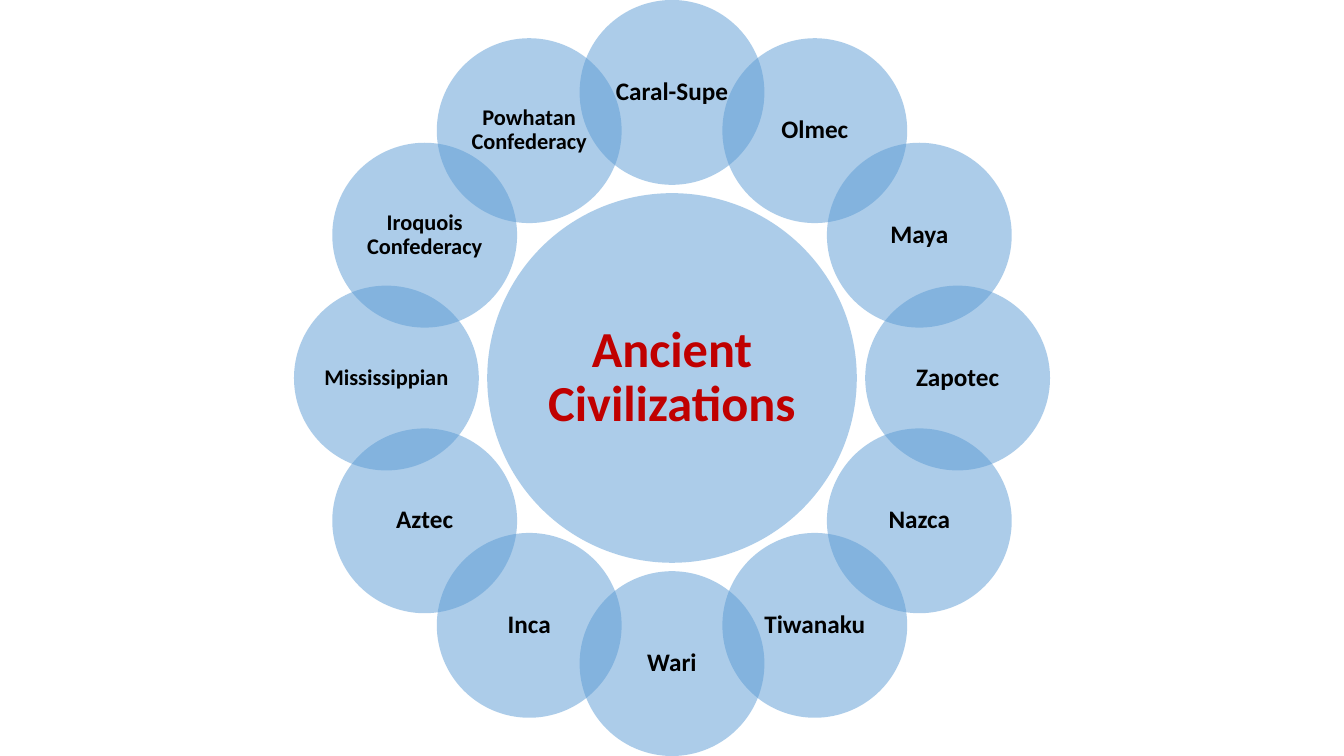
from math import sin, cos, radians, sqrt
from pptx import Presentation
from pptx.dml.color import RGBColor
from pptx.enum.shapes import MSO_SHAPE
from pptx.enum.text import MSO_ANCHOR, MSO_AUTO_SIZE, PP_ALIGN
from pptx.oxml.xmlchemy import OxmlElement
from pptx.util import Pt

# Content: clockwise from the top, with text size
TITLE = "Ancient Civilizations"
RING = [
    ("Caral-Supe", 18), ("Olmec", 18), ("Maya", 18), ("Zapotec", 18),
    ("Nazca", 18), ("Tiwanaku", 18), ("Wari", 18), ("Inca", 18),
    ("Aztec", 18), ("Mississippian", 16), ("Iroquois Confederacy", 16),
    ("Powhatan Confederacy", 16),
]

# Format
BLUE = RGBColor(0x5B, 0x9B, 0xD5)
RED = RGBColor(0xC0, 0x00, 0x00)
BLACK = RGBColor(0x00, 0x00, 0x00)
WIDE, HIGH = 960, 540
MID_X, MID_Y = WIDE / 2, HIGH / 2
HUB, DISC = 264, 132
RADIUS = (HIGH - DISC) / 2


def place(shape, x, y, size):
    box = {"left": x - size / 2, "top": y - size / 2,
           "width": size, "height": size}
    for name, value in box.items():
        setattr(shape, name, Pt(value))


def circle(shapes, x, y, size):
    disc = shapes.add_shape(MSO_SHAPE.OVAL, 0, 0, 0, 0)
    place(disc, x, y, size)
    disc.shadow.inherit = False
    disc.line.fill.background()
    disc.fill.solid()
    disc.fill.fore_color.rgb = BLUE
    # Half transparent
    alpha = OxmlElement("a:alpha")
    alpha.set("val", "50000")
    disc.fill._xPr.find(".//{*}srgbClr").append(alpha)
    return disc


def write(shape, text, size, color, inset):
    frame = shape.text_frame
    frame.text = text
    look = {"word_wrap": True, "auto_size": MSO_AUTO_SIZE.NONE,
            "vertical_anchor": MSO_ANCHOR.MIDDLE}
    for side in ("left", "top", "right", "bottom"):
        look["margin_" + side] = Pt(inset)
    for name, value in look.items():
        setattr(frame, name, value)
    para = frame.paragraphs[0]
    para.alignment = PP_ALIGN.CENTER
    para.line_spacing = 0.9
    font = para.runs[0].font
    for name, value in {"name": "Calibri", "size": Pt(size),
                        "bold": True}.items():
        setattr(font, name, value)
    font.color.rgb = color


def main():
    deck = Presentation()
    deck.slide_width, deck.slide_height = Pt(WIDE), Pt(HIGH)
    shapes = deck.slides.add_slide(deck.slide_layouts[5]).shapes

    # Hub, with the title on top of it
    hub = circle(shapes, MID_X, MID_Y, HUB)
    title = shapes.title
    hub.element.addnext(title.element)
    place(title, MID_X, MID_Y, round(HUB / sqrt(2)))
    write(title, TITLE, 36, RED, 3.6)

    # Ring of discs
    step = 360 / len(RING)
    for i, (name, size) in enumerate(RING):
        turn = radians(i * step)
        disc = circle(shapes, MID_X + RADIUS * sin(turn),
                      MID_Y - RADIUS * cos(turn), DISC)
        write(disc, name, size, BLACK, 2)

    deck.save("out.pptx")


if __name__ == "__main__":
    main()
